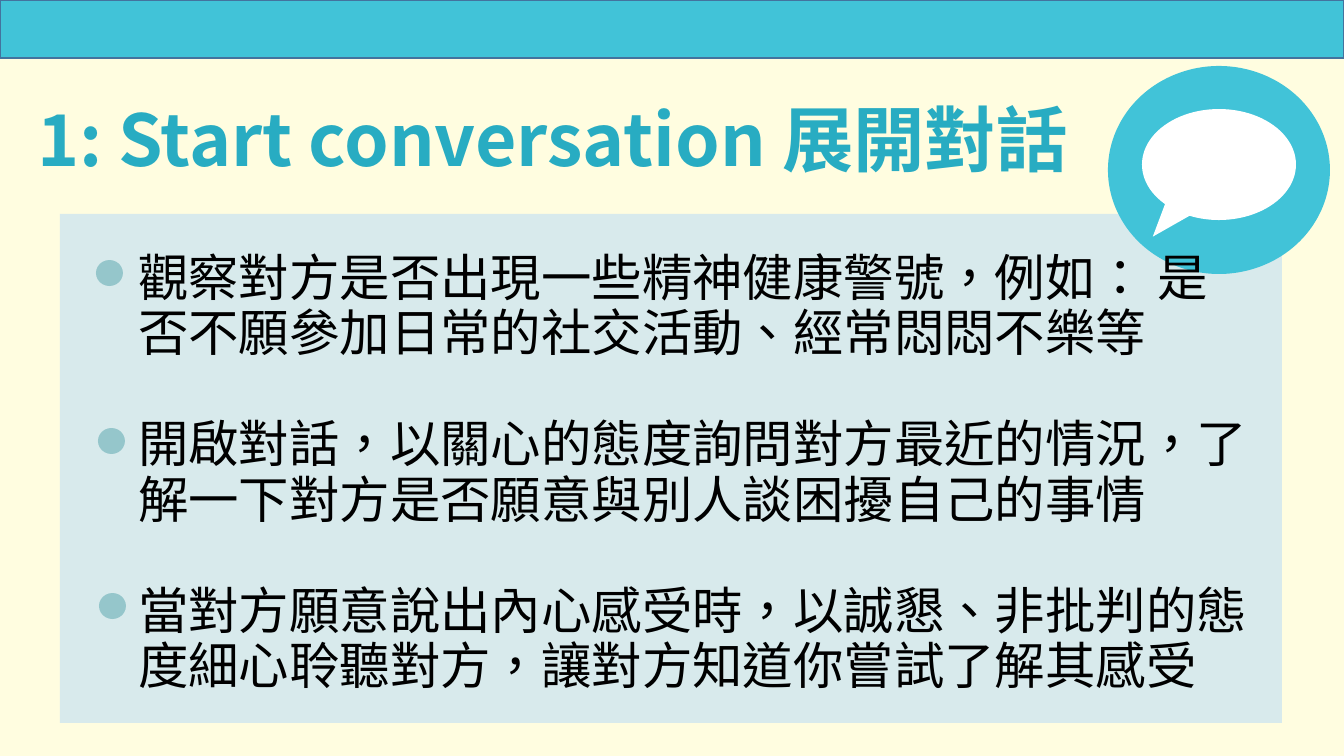
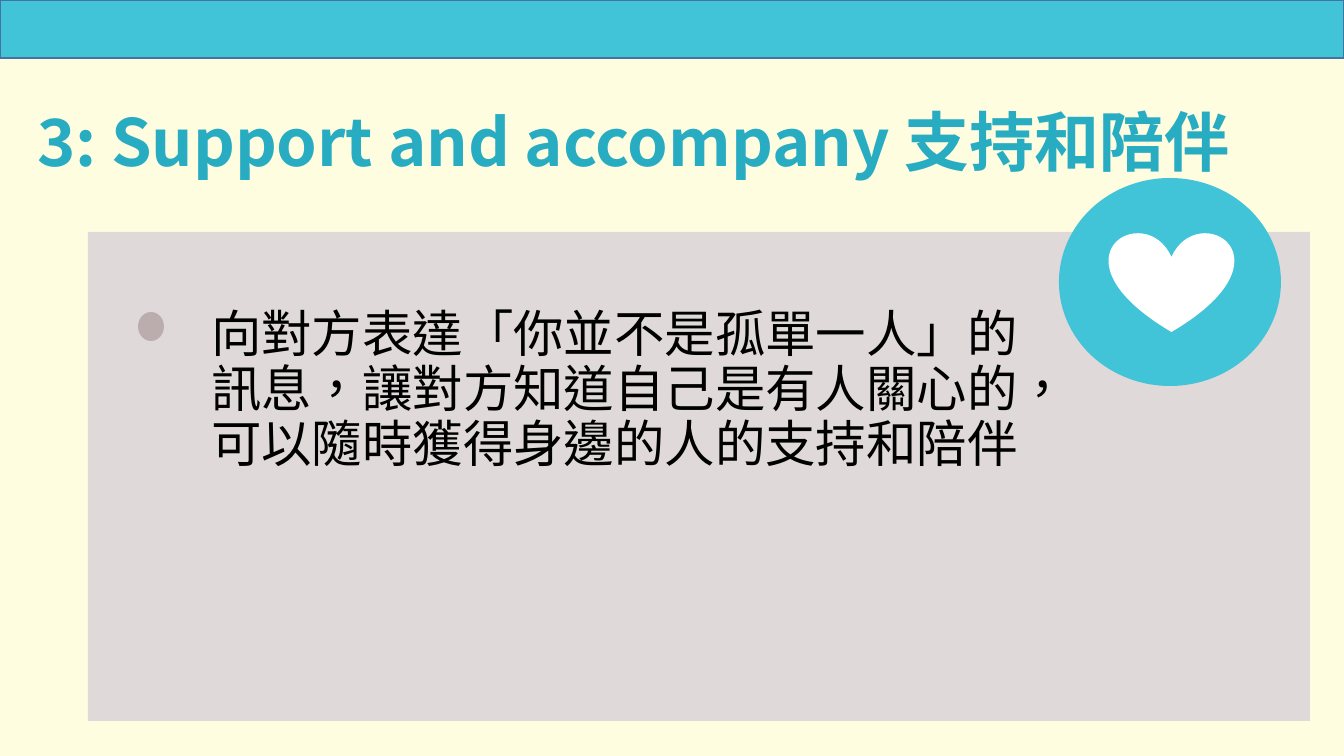
"""Builds two slides on starting a conversation and giving support."""
from lxml.etree import SubElement
from pptx import Presentation
from pptx.dml.color import RGBColor
from pptx.enum.lang import MSO_LANGUAGE_ID as Language
from pptx.enum.shapes import MSO_SHAPE as Shape
from pptx.enum.text import MSO_ANCHOR as Anchor, MSO_AUTO_SIZE as AutoSize, PP_ALIGN as Align
from pptx.oxml.ns import qn
from pptx.util import Pt

PX = 914400 / 100.8
WIDTH, HEIGHT = 1344, 756
FONT = "Noto Sans CJK SC"
CREAM = RGBColor(0xFF, 0xFD, 0xE0)
CYAN = RGBColor(0x41, 0xC3, 0xD8)
NAVY = RGBColor(0x43, 0x73, 0x9E)
TEAL = RGBColor(0x28, 0xAC, 0xC2)
BLACK = RGBColor(0, 0, 0)
WHITE = RGBColor(0xFF, 0xFF, 0xFF)
PALE_BLUE = RGBColor(0xD8, 0xEA, 0xEC)
DOT_BLUE = RGBColor(0x95, 0xC6, 0xCB)
PALE_MAUVE = RGBColor(0xDF, 0xD9, 0xDA)
DOT_MAUVE = RGBColor(0xBB, 0xAC, 0xAE)


def px(length):
    return round(length * PX)


class Deck:
    def __init__(self):
        self.prs = Presentation()
        self.prs.slide_width, self.prs.slide_height = px(WIDTH), px(HEIGHT)
        background = self.prs.slide_master.background.fill
        background.solid()
        background.fore_color.rgb = CREAM
        self.slide = None

    def new_slide(self):
        self.slide = self.prs.slides.add_slide(self.prs.slide_layouts[1])
        self.shape(Shape.RECTANGLE, (0, 0, WIDTH, 58), CYAN, NAVY)

    def shape(self, kind, box, color, outline=None):
        shape = self.slide.shapes.add_shape(kind, *map(px, box))
        shape.shadow.inherit = False
        shape.fill.solid()
        shape.fill.fore_color.rgb = color
        if outline is None:
            shape.line.fill.background()
        else:
            shape.line.color.rgb = outline
            shape.line.width = Pt(1)
        return shape

    def placeholder(self, holder, box, anchor):
        holder.left, holder.top, holder.width, holder.height = map(px, box)
        holder.element.getparent().append(holder.element)
        frame = holder.text_frame
        frame.word_wrap = True
        frame.auto_size = AutoSize.NONE
        frame.vertical_anchor = anchor
        return frame

    def style(self, paragraph, size, line_height, color, bold=False):
        paragraph.alignment = Align.LEFT
        paragraph.line_spacing = Pt(line_height)
        paragraph.space_before = Pt(0)
        for run in paragraph.runs:
            font = run.font
            font.size, font.bold, font.name = Pt(size), bold, FONT
            font.color.rgb = color
            font.language_id = Language.TRADITIONAL_CHINESE
            SubElement(font._element, qn("a:ea"), typeface=FONT)

    def title(self, text, box, size):
        frame = self.placeholder(self.slide.shapes.title, box, Anchor.BOTTOM)
        frame.text = text
        self.style(frame.paragraphs[0], size, size, TEAL, bold=True)

    def body(self, points, box):
        frame = self.placeholder(self.slide.placeholders[1], box, Anchor.TOP)
        frame.text = "\n".join(points)
        for index, paragraph in enumerate(frame.paragraphs):
            properties = paragraph._p.get_or_add_pPr()
            properties.set("marL", "0")
            properties.set("indent", "0")
            SubElement(properties, qn("a:buNone"))
            self.style(paragraph, 36, 39.5, BLACK)
            if index:
                paragraph.space_before = Pt(40)

    def badge(self, left, top):
        self.shape(Shape.OVAL, (left, top, 222, 208), CYAN)


def main():
    deck = Deck()

    deck.new_slide()
    deck.shape(Shape.RECTANGLE, (60, 214, 1222, 509), PALE_BLUE)
    deck.title("1: Start conversation 展開對話", (27, 65, 1078, 121), 51)
    for left, top in ((96, 260), (98, 428), (99, 593)):
        deck.shape(Shape.OVAL, (left, top, 27, 26), DOT_BLUE)
    deck.badge(1108, 66)
    bubble = deck.shape(Shape.OVAL_CALLOUT, (1142, 109, 154, 111), WHITE)
    bubble.adjustments[0], bubble.adjustments[1] = -0.43, 0.65
    deck.body((
        "觀察對方是否出現一些精神健康警號，例如： 是否不願參加日常的社交活動、經常悶悶不樂等",
        "開啟對話，以關心的態度詢問對方最近的情況，了解一下對方是否願意與別人談困擾自己的事情",
        "當對方願意說出內心感受時，以誠懇、非批判的態度細心聆聽對方，讓對方知道你嘗試了解其感受",
    ), (128, 246, 1134, 415))

    deck.new_slide()
    deck.shape(Shape.RECTANGLE, (88, 232, 1222, 489), PALE_MAUVE)
    deck.title("3: Support and accompany 支持和陪伴", (27, 64, 1293, 121), 46.5)
    deck.body((
        "向對方表達「你並不是孤單一人」的訊息，讓對方知道自己是有人關心的，可以隨時獲得身邊的人的支持和陪伴",
    ), (201, 302, 839, 382))
    deck.shape(Shape.OVAL, (138, 312, 26, 29), DOT_MAUVE)
    deck.badge(1059, 178)
    deck.shape(Shape.HEART, (1109, 232, 125, 100), WHITE)

    deck.prs.save("out.pptx")


if __name__ == "__main__":
    main()
